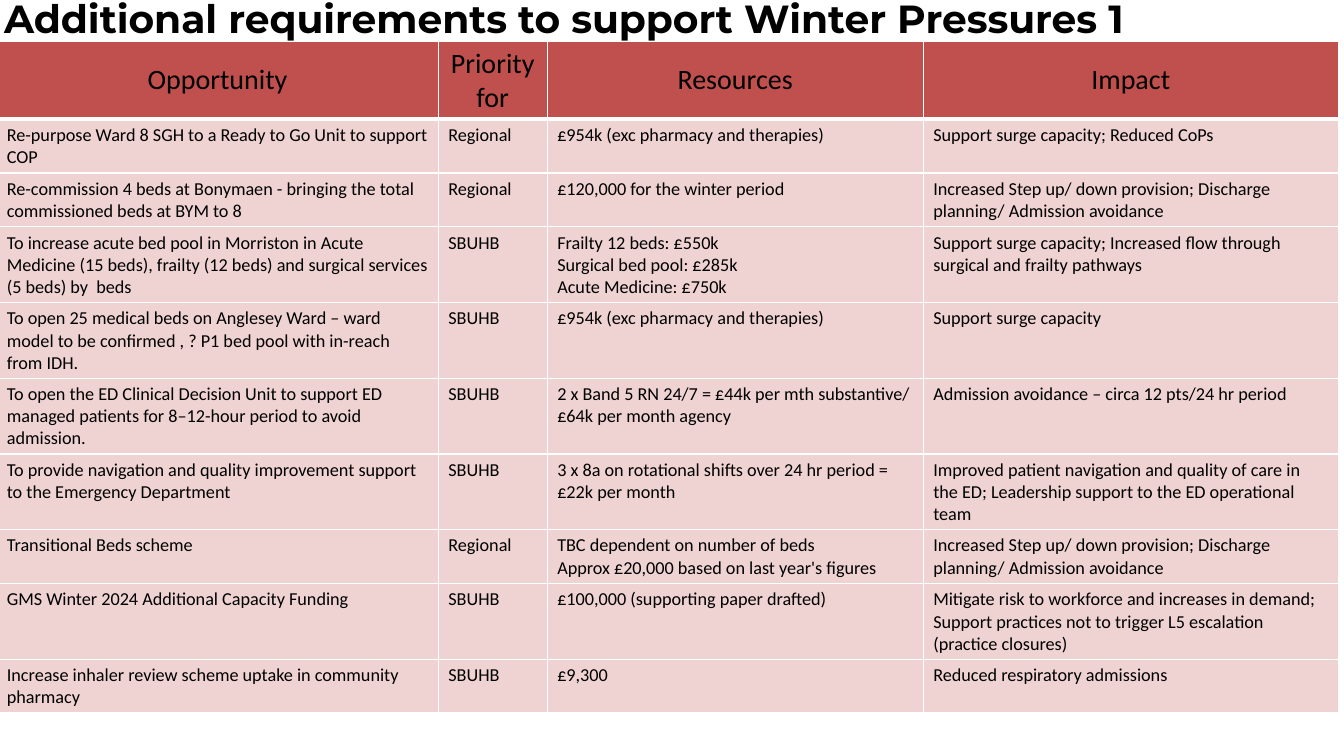
from lxml.etree import SubElement
from pptx import Presentation
from pptx.dml.color import RGBColor
from pptx.enum.text import MSO_ANCHOR as Anchor, MSO_AUTO_SIZE as AutoSize, PP_ALIGN as Align
from pptx.oxml.ns import qn
from pptx.util import Pt

RED, WHITE, BLACK = "C0504D", "FFFFFF", "000000"
TITLE_FONT = {"name": "Montserrat", "size": Pt(28), "bold": True}
HEADER_FONT = {"name": "Calibri", "size": Pt(20), "bold": False}
BODY_FONT = {"name": "Calibri", "size": Pt(13), "bold": False}

COLUMN_WIDTHS = [315.4, 77.8, 268.6, 296.6]
ROW_HEIGHTS = [26, 36, 36, 50] + [36] * 6
HEADINGS = ["Opportunity", "Priority for", "Resources", "Impact"]
REQUIREMENTS = [
    ["Re-purpose Ward 8 SGH to a Ready to Go Unit to support COP",
     "Regional", "£954k (exc pharmacy and therapies)",
     "Support surge capacity; Reduced CoPs"],
    ["Re-commission 4 beds at Bonymaen - bringing the total commissioned beds at BYM to 8",
     "Regional", "£120,000 for the winter period",
     "Increased Step up/ down provision; Discharge planning/ Admission avoidance"],
    ["To increase acute bed pool in Morriston in Acute Medicine (15 beds), frailty (12 beds) "
     "and surgical services (5 beds) by  beds",
     "SBUHB", "Frailty 12 beds: £550k\nSurgical bed pool: £285k\nAcute Medicine: £750k",
     "Support surge capacity; Increased flow through surgical and frailty pathways"],
    ["To open 25 medical beds on Anglesey Ward – ward model to be confirmed , "
     "? P1 bed pool with in-reach from IDH.",
     "SBUHB", "£954k (exc pharmacy and therapies)", "Support surge capacity"],
    ["To open the ED Clinical Decision Unit to support ED managed patients "
     "for 8–12-hour period to avoid admission.",
     "SBUHB", "2 x Band 5 RN 24/7 = £44k per mth substantive/ £64k per month agency",
     "Admission avoidance – circa 12 pts/24 hr period"],
    ["To provide navigation and quality improvement support to the Emergency Department",
     "SBUHB", "3 x 8a on rotational shifts over 24 hr period = £22k per month",
     "Improved patient navigation and quality of care in the ED; "
     "Leadership support to the ED operational team"],
    ["Transitional Beds scheme",
     "Regional", "TBC dependent on number of beds\nApprox £20,000 based on last year's figures",
     "Increased Step up/ down provision; Discharge planning/ Admission avoidance"],
    ["GMS Winter 2024 Additional Capacity Funding",
     "SBUHB", "£100,000 (supporting paper drafted)",
     "Mitigate risk to workforce and increases in demand; Support practices "
     "not to trigger L5 escalation (practice closures)"],
    ["Increase inhaler review scheme uptake in community pharmacy",
     "SBUHB", "£9,300", "Reduced respiratory admissions"],
]


def set_color(color_format, value):
    color_format.rgb = RGBColor.from_string(value)


def set_attributes(target, values):
    for name, value in values.items():
        setattr(target, name, value)


def format_text(text_frame, font_values, alignment):
    for paragraph in text_frame.paragraphs:
        paragraph.alignment = alignment
        for run in paragraph.runs:
            set_attributes(run.font, font_values)
            set_color(run.font.color, BLACK)


def add_borders(cell, widths):
    properties = cell._tc.get_or_add_tcPr()
    for side, width in widths.items():
        line = SubElement(properties, qn(f"a:ln{side}"), w=str(Pt(width)))
        fill = SubElement(line, qn("a:solidFill"))
        SubElement(fill, qn("a:srgbClr"), val=WHITE)


def fill_cell(cell, color, opacity):
    cell.fill.solid()
    set_color(cell.fill.fore_color, color)
    if opacity < 100:
        color_element = cell._tc.tcPr.find(qn("a:solidFill")).find(qn("a:srgbClr"))
        SubElement(color_element, qn("a:alpha"), val=str(opacity * 1000))


def add_title(slide, text):
    title = slide.shapes.title
    set_attributes(title, {"left": Pt(-4.3), "top": Pt(-8), "width": Pt(960), "height": Pt(41)})
    frame = title.text_frame
    frame.text = text
    set_attributes(frame, {"word_wrap": True, "vertical_anchor": Anchor.TOP,
                           "auto_size": AutoSize.SHAPE_TO_FIT_TEXT})
    format_text(frame, TITLE_FONT, Align.LEFT)


def add_requirements_table(slide, rows):
    shape = slide.shapes.add_table(len(rows), len(HEADINGS), Pt(-2.3), Pt(29.8), Pt(958.4), Pt(479))
    table = shape.table
    for column, width in zip(table.columns, COLUMN_WIDTHS):
        column.width = Pt(width)
    for row, height in zip(table.rows, ROW_HEIGHTS):
        row.height = Pt(height)
    shape.height = Pt(479)

    for row_index, texts in enumerate(rows):
        is_header = row_index == 0
        # A thick rule parts the header from the body
        borders = {"L": 1, "R": 1, "T": 3 if row_index == 1 else 1, "B": 3 if is_header else 1}
        for column_index, text in enumerate(texts):
            cell = table.cell(row_index, column_index)
            cell.text = text
            cell.vertical_anchor = Anchor.MIDDLE if is_header else Anchor.TOP
            format_text(cell.text_frame, HEADER_FONT if is_header else BODY_FONT,
                        Align.CENTER if is_header else Align.LEFT)
            add_borders(cell, borders)
            fill_cell(cell, RED, 100 if is_header else 25)


def main():
    presentation = Presentation()
    set_attributes(presentation, {"slide_width": Pt(960), "slide_height": Pt(540)})
    title_only = presentation.slide_layouts[5]
    slide = presentation.slides.add_slide(title_only)
    add_title(slide, "Additional requirements to support Winter Pressures 1")
    add_requirements_table(slide, [HEADINGS] + REQUIREMENTS)
    presentation.save("out.pptx")


if __name__ == "__main__":
    main()
